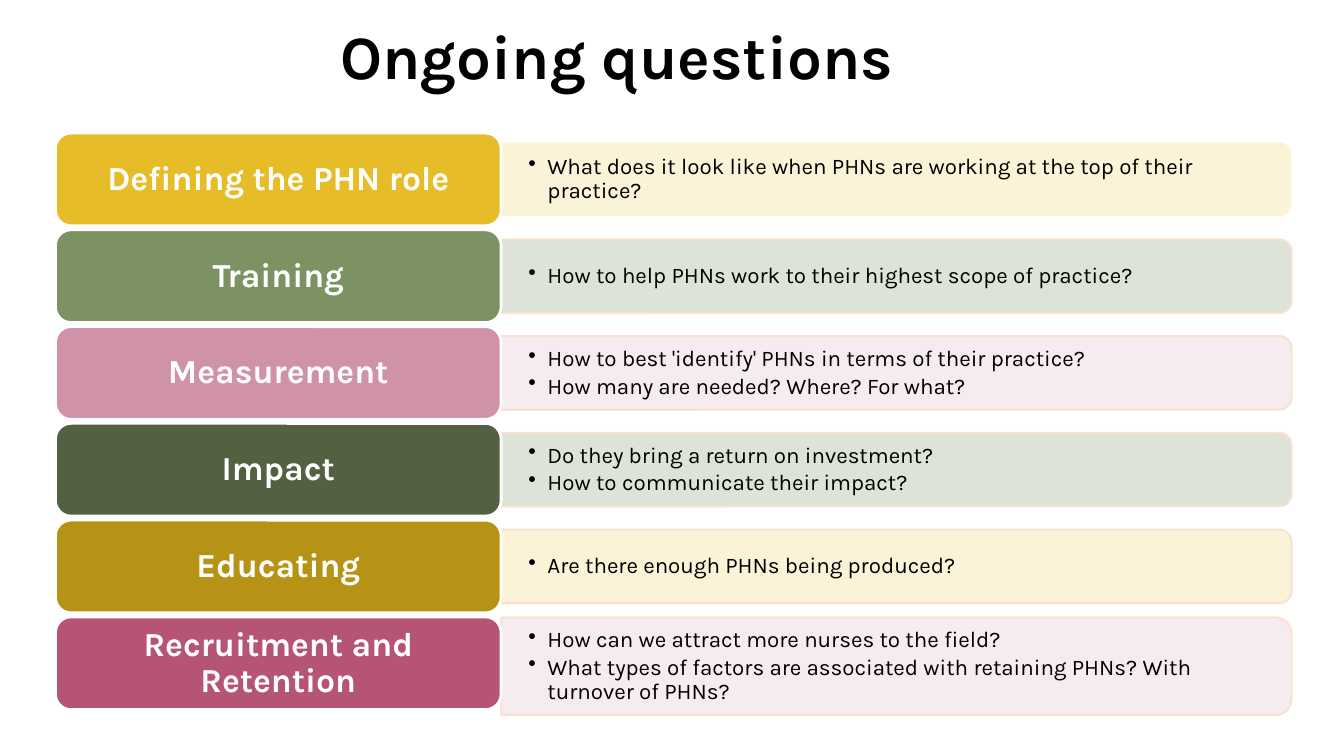
from dataclasses import dataclass

from lxml import etree
from pptx import Presentation
from pptx.dml.color import RGBColor
from pptx.enum.shapes import MSO_SHAPE
from pptx.enum.text import MSO_ANCHOR, PP_ALIGN
from pptx.oxml.ns import qn
from pptx.util import Inches, Pt

LABEL_SHAPE = MSO_SHAPE.ROUNDED_RECTANGLE
PANEL_SHAPE = MSO_SHAPE.ROUND_2_SAME_RECTANGLE
MIDDLE = MSO_ANCHOR.MIDDLE
CENTER = PP_ALIGN.CENTER
LEFT = PP_ALIGN.LEFT


@dataclass(frozen=True)
class Theme:
    font: str = "Karla"
    title_size: int = 44
    label_size: int = 24
    question_size: int = 16
    black: str = "000000"
    white: str = "FFFFFF"
    panel_edge: str = "FAE0CF"
    pale_gold: str = "FAF2D4"
    pale_green: str = "DBE1D3"
    pale_pink: str = "F6E9ED"
    panel_opacity: int = 90


THEME = Theme()
SLIDE_WIDTH, SLIDE_HEIGHT = 13.33, 7.5
TITLE_BOX = (0.37, -0.13, 11.5, 1.45)
TABLE_BOX = (0.55, 1.32, 12.26, 5.72)
ROW_PITCH = 0.96
LABEL_WIDTH, LABEL_HEIGHT = 4.42, 0.92
PANEL_HEIGHT, TALL_PANEL_HEIGHT = 0.73, 0.97
TALL_PANEL_DROP = 0.03

# Label, label colour, panel colour, questions
TOPICS = [
    ("Defining the PHN role", "E7BC29", THEME.pale_gold,
     ["What does it look like when PHNs are working at the top of their practice?"]),
    ("Training", "7D9263", THEME.pale_green,
     ["How to help PHNs work to their highest scope of practice?"]),
    ("Measurement", "D092A7", THEME.pale_pink,
     ["How to best 'identify' PHNs in terms of their practice?",
      "How many are needed? Where? For what?"]),
    ("Impact", "536142", THEME.pale_green,
     ["Do they bring a return on investment?",
      "How to communicate their impact?"]),
    ("Educating", "B79315", THEME.pale_gold,
     ["Are there enough PHNs being produced?"]),
    ("Recruitment and Retention", "B55475", THEME.pale_pink,
     ["How can we attract more nurses to the field?",
      "What types of factors are associated with retaining PHNs? With turnover of PHNs?"]),
]


def set_attributes(target, values):
    for name, value in values.items():
        setattr(target, name, value)


def add_bullet(paragraph):
    properties = paragraph._p.get_or_add_pPr()
    properties.set("marL", str(Inches(0.19)))
    properties.set("indent", str(-Inches(0.19)))
    etree.SubElement(properties, qn("a:buChar")).set("char", "•")


def set_opacity(color_format_parent, percent):
    color = color_format_parent.find(".//" + qn("a:srgbClr"))
    etree.SubElement(color, qn("a:alpha")).set("val", str(percent * 1000))


def write_text(shape, lines, size, color, bold=False, align=CENTER, bulleted=False):
    frame = shape.text_frame
    set_attributes(frame, {"word_wrap": True, "vertical_anchor": MIDDLE})
    for index, line in enumerate(lines):
        paragraph = frame.paragraphs[0] if index == 0 else frame.add_paragraph()
        set_attributes(paragraph, {"alignment": align, "line_spacing": 0.9})
        if bulleted:
            paragraph.space_after = Pt(2.5)
            add_bullet(paragraph)
        run = paragraph.add_run()
        run.text = line
        set_attributes(run.font, {"name": THEME.font, "size": Pt(size), "bold": bold})
        run.font.color.rgb = RGBColor.from_string(color)


def add_filled_shape(slide, kind, box, fill, edge, edge_width):
    shape = slide.shapes.add_shape(kind, *map(Inches, box))
    shape.shadow.inherit = False
    shape.fill.solid()
    shape.fill.fore_color.rgb = RGBColor.from_string(fill)
    if edge:
        shape.line.color.rgb = RGBColor.from_string(edge)
        shape.line.width = Pt(edge_width)
    else:
        shape.line.fill.background()
    return shape


def add_title(slide, box):
    title = slide.shapes.add_textbox(*map(Inches, box))
    write_text(title, ["Ongoing questions"], THEME.title_size, THEME.black, bold=True)


def add_panel(slide, box, fill, edge, questions):
    left, top, width, height = box
    # The rounded end faces right, so the upright shape is turned about its centre
    upright = (left + (width - height) / 2, top + (height - width) / 2, height, width)
    panel = add_filled_shape(slide, PANEL_SHAPE, upright, fill, edge, 1.5)
    panel.rotation = 90
    for part in panel._element.spPr.iter(qn("a:solidFill")):
        set_opacity(part, THEME.panel_opacity)

    # Questions stay level in their own box
    text_box = slide.shapes.add_textbox(*map(Inches, (left, top + 0.04, width - 0.04, height - 0.08)))
    set_attributes(text_box.text_frame, {
        "margin_left": Inches(0.27), "margin_right": Inches(0.27),
        "margin_top": Inches(0.14), "margin_bottom": Inches(0.14)})
    write_text(text_box, questions, THEME.question_size, THEME.black,
               align=LEFT, bulleted=True)


def add_topic_table(slide, box):
    left, top, width, _ = box
    last = len(TOPICS) - 1
    for row, (label, label_fill, panel_fill, questions) in enumerate(TOPICS):
        row_top = top + row * ROW_PITCH
        panel_height = TALL_PANEL_HEIGHT if row == last else PANEL_HEIGHT
        drop = TALL_PANEL_DROP if row == last else 0
        panel_top = row_top + (LABEL_HEIGHT - panel_height) / 2 + drop
        edge = THEME.panel_edge if row else None
        add_panel(slide, (left + LABEL_WIDTH, panel_top, width - LABEL_WIDTH, panel_height),
                  panel_fill, edge, questions)

        # Topic label
        label_shape = add_filled_shape(slide, LABEL_SHAPE, (left, row_top, LABEL_WIDTH, LABEL_HEIGHT),
                                       label_fill, THEME.white, 2)
        write_text(label_shape, [label], THEME.label_size, THEME.white, bold=True)


def main():
    presentation = Presentation()
    presentation.slide_width = Inches(SLIDE_WIDTH)
    presentation.slide_height = Inches(SLIDE_HEIGHT)
    slide = presentation.slides.add_slide(presentation.slide_layouts[6])
    add_title(slide, TITLE_BOX)
    add_topic_table(slide, TABLE_BOX)
    presentation.save("out.pptx")


if __name__ == "__main__":
    main()
